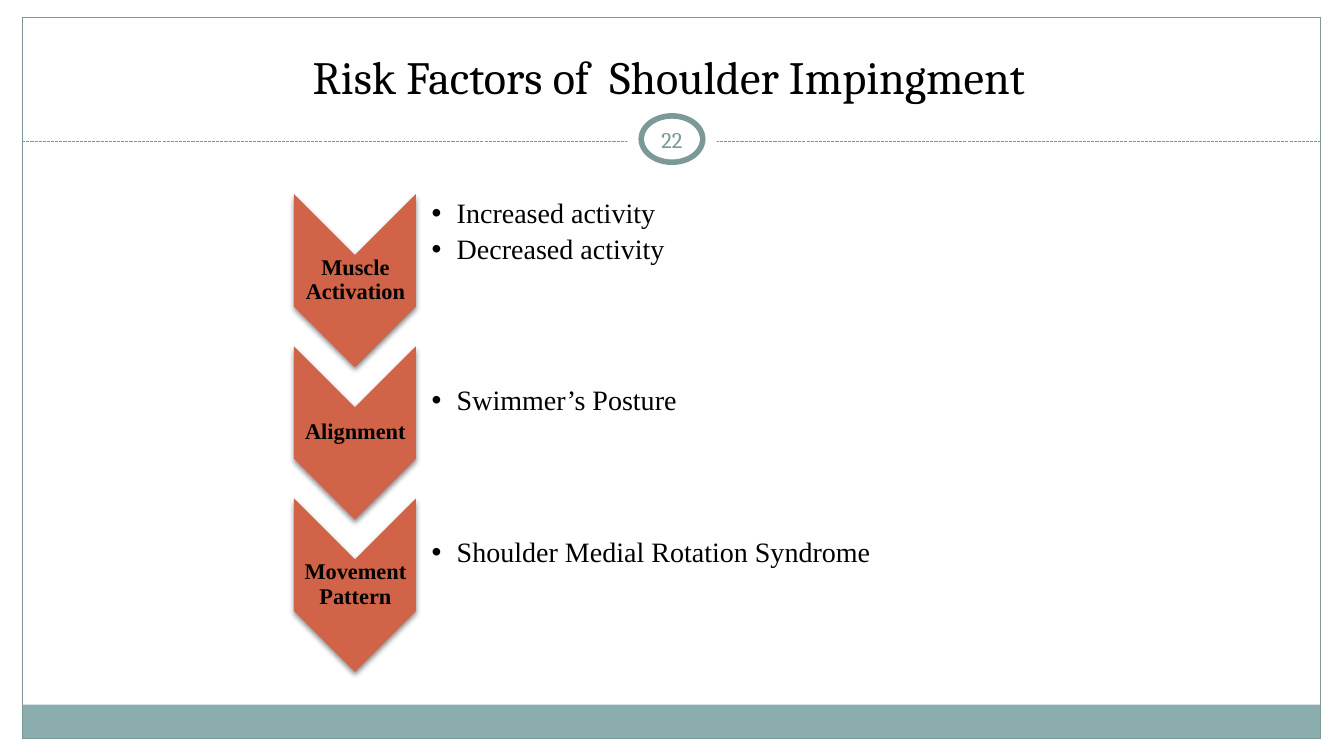
import pptx
import pptx.util
import pptx.dml.color
import pptx.enum.dml
import pptx.enum.shapes
import pptx.enum.text
import pptx.oxml
import pptx.oxml.ns
from lxml import etree

Inches, Pt = pptx.util.Inches, pptx.util.Pt
SHAPE = pptx.enum.shapes.MSO_SHAPE
ALIGN = pptx.enum.text.PP_ALIGN
ANCHOR = pptx.enum.text.MSO_ANCHOR
RGB = pptx.dml.color.RGBColor.from_string
qn = pptx.oxml.ns.qn

COLORS = {"white": "FFFFFF", "band": "8CADAE", "teal": "7C999A",
          "chevron": "D16349", "black": "000000"}
TITLE = {"size": Pt(33), "name": "Cambria", "bold": False}
NUMBER = {"size": Pt(16), "name": "Cambria", "bold": False}
LABEL = {"size": Pt(16), "name": "Times New Roman", "bold": True}
ITEM = {"size": Pt(20), "name": "Times New Roman", "bold": False}

FACTORS = [
    ("Muscle Activation", ["Increased activity", "Decreased activity"], ANCHOR.TOP),
    ("Alignment", ["Swimmer’s Posture"], ANCHOR.MIDDLE),
    ("Movement Pattern", ["Shoulder Medial Rotation Syndrome"], ANCHOR.MIDDLE),
]


def add_shape(kind, box, fill=None, line=None, width=0.75):
    sp = s.shapes.add_shape(kind, *map(Inches, box))
    sp.shadow.inherit = False
    if fill:
        sp.fill.solid()
        sp.fill.fore_color.rgb = RGB(COLORS[fill])
    else:
        sp.fill.background()
    if line:
        sp.line.color.rgb = RGB(COLORS[line])
        sp.line.width = Pt(width)
    else:
        sp.line.fill.background()
    return sp


def write(sp, box, lines, font, color="black", anchor=ANCHOR.MIDDLE,
          align=ALIGN.CENTER, inset=0.01, left=0.01, spacing=0.9):
    sp.left, sp.top, sp.width, sp.height = map(Inches, box)
    tf = sp.text_frame
    frame = {"word_wrap": True, "auto_size": pptx.enum.text.MSO_AUTO_SIZE.NONE,
             "vertical_anchor": anchor, "margin_left": Inches(left),
             "margin_right": Inches(inset), "margin_top": Inches(inset),
             "margin_bottom": Inches(inset)}
    for key, value in frame.items():
        setattr(tf, key, value)
    for i, line in enumerate(lines):
        p = tf.add_paragraph() if i else tf.paragraphs[0]
        for key, value in {"alignment": align, "line_spacing": spacing,
                           "space_before": Pt(0), "space_after": Pt(4)}.items():
            setattr(p, key, value)
        r = p.add_run()
        r.text = line
        for key, value in font.items():
            setattr(r.font, key, value)
        r.font.color.rgb = RGB(COLORS[color])
    return tf


prs = pptx.Presentation()
prs.slide_width, prs.slide_height = Inches(13.33), Inches(7.5)
s = prs.slides.add_slide(prs.slide_layouts.get_by_name("Comparison"))
title, *lists, spare = s.placeholders
spare.element.getparent().remove(spare.element)

write(title, (0.44, 0.25, 12.44, 0.83), ["Risk Factors of  Shoulder Impingment "],
      TITLE, anchor=ANCHOR.BOTTOM, inset=0.05, left=0.1, spacing=1.0)

add_shape(SHAPE.RECTANGLE, (0.22, 6.99, 12.88, 0.34), "band")
add_shape(SHAPE.RECTANGLE, (0.22, 0.17, 12.88, 7.16), line="teal")

rule = s.shapes.add_connector(pptx.enum.shapes.MSO_CONNECTOR.STRAIGHT,
                              *map(Inches, (0.22, 1.4, 13.1, 1.4)))
rule.line.color.rgb = RGB(COLORS["teal"])
rule.line.width = Pt(0.75)
rule.line.dash_style = pptx.enum.dml.MSO_LINE.SQUARE_DOT
etree.SubElement(rule.element.spPr, qn("a:effectLst"))

add_shape(SHAPE.OVAL, (6.22, 1.05, 0.89, 0.67), "white")
add_shape(SHAPE.OVAL, (6.36, 1.15, 0.61, 0.46), "white", "teal", 4)
number = s.shapes.add_textbox(0, 0, 0, 0)
write(number, (6.33, 1.14, 0.67, 0.48), ["22"], NUMBER, "teal",
      inset=0.05, left=0.05, spacing=1.0)

for i, (name, items, anchor) in enumerate(FACTORS):
    offset = 1.51 * i
    chevron = add_shape(SHAPE.CHEVRON, (2.66, 2.18 + offset, 1.72, 1.21), "chevron")
    chevron.rotation = 90
    effects = chevron.element.spPr.find(qn("a:effectLst"))
    shadow = etree.SubElement(effects, qn("a:outerShdw"), blurRad=str(Pt(4)),
                              dist=str(Pt(2)), dir="5400000", rotWithShape="0")
    tint = etree.SubElement(shadow, qn("a:srgbClr"), val=COLORS["black"])
    etree.SubElement(tint, qn("a:alpha"), val="45000")

    label = s.shapes.add_textbox(0, 0, 0, 0)
    write(label, (2.92, 2.52 + offset, 1.21, 0.52), [name], LABEL)

    tf = write(lists[i], (4.12, 1.97 + offset, 6.32, 1.01), items, ITEM,
               anchor=anchor, align=ALIGN.LEFT, left=0.16)
    for p in tf.paragraphs:
        pPr = p._p.get_or_add_pPr()
        pPr.set("marL", str(Inches(0.25)))
        pPr.set("indent", str(Inches(-0.25)))
        etree.SubElement(pPr, qn("a:buChar"), char="•")

prs.save("out.pptx")
